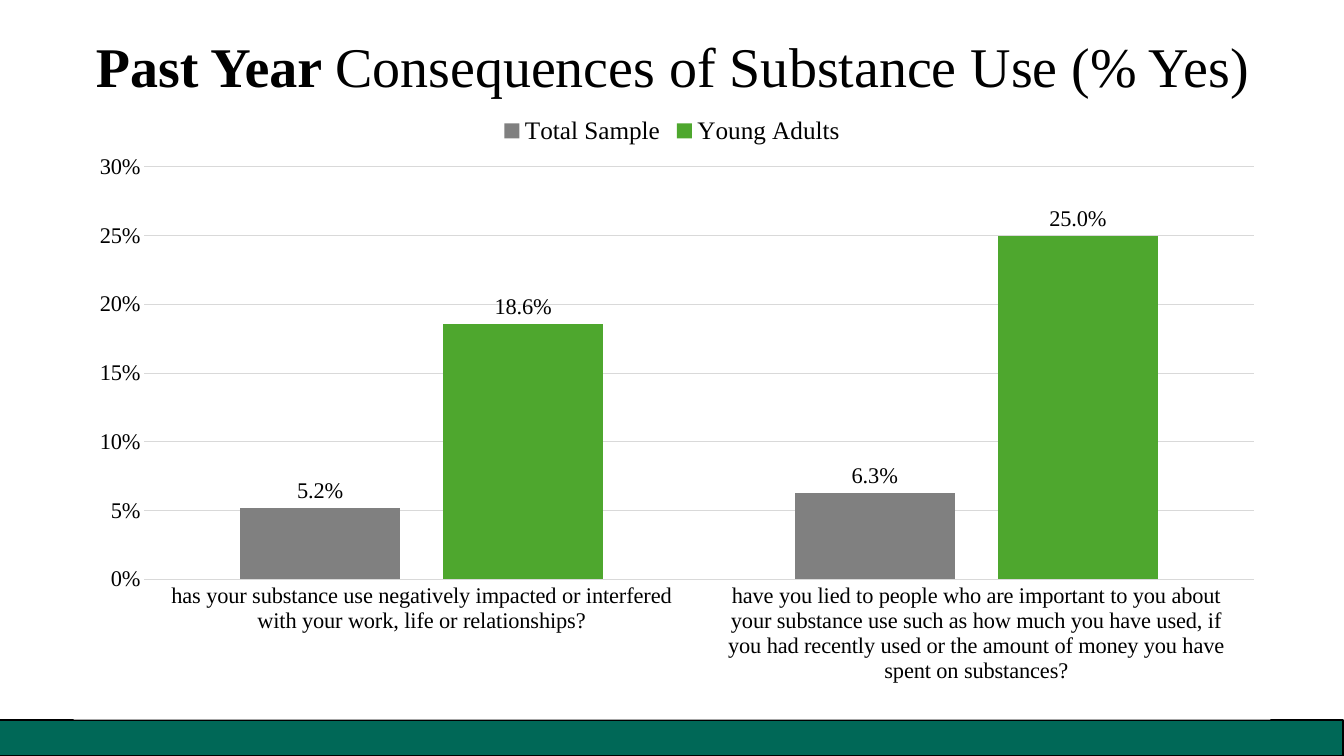
from dataclasses import dataclass

from lxml import etree
from pptx import Presentation
from pptx import util as u
from pptx.chart.data import CategoryChartData
from pptx.dml.color import RGBColor
from pptx.enum import chart as ch, shapes, text
from pptx.oxml import parse_xml
from pptx.oxml.ns import nsdecls, qn

PX = 9144  # 100 px to the inch


@dataclass(frozen=True)
class Theme:
    font: str = "Times New Roman"
    ink: str = "000000"
    paper: str = "FFFFFF"
    grid: str = "D9D9D9"
    footer: str = "006857"
    total: str = "808080"
    young: str = "4EA72E"
    title_size: int = 40
    legend_size: int = 18
    label_size: int = 16


THEME = Theme()
QUESTIONS = [
    "has your substance use negatively impacted or interfered with your work, "
    "life or relationships?",
    "have you lied to people who are important to you about your substance use "
    "such as how much you have used, if you had recently used or the amount of "
    "money you have spent on substances?",
]
# name, values, label format, colour
SERIES = [
    ("Total Sample", (0.052, 0.063), "###0.0%", THEME.total),
    ("Young Adults", (0.186, 0.25), "0.0%", THEME.young),
]
PLOT_AREA = {"x": 0.059, "y": 0.101, "w": 0.927, "h": 0.671}


def px(*lengths):
    return [u.Emu(length * PX) for length in lengths]


def rgb(colour):
    return RGBColor.from_string(colour)


def style_font(font, size):
    font.name = THEME.font
    font.size = u.Pt(size)
    font.color.rgb = rgb(THEME.ink)


def style_line(line, colour, width):
    line.color.rgb = rgb(colour)
    line.width = u.Pt(width)


def add_footer_band(page):
    band = page.shapes.add_shape(shapes.MSO_SHAPE.RECTANGLE, *px(-1, 714, 1333, 36))
    band.shadow.inherit = False
    band.fill.solid()
    band.fill.fore_color.rgb = rgb(THEME.footer)
    style_line(band.line, THEME.ink, 1.5)


def fill_title(page):
    title = page.shapes.title
    title.left, title.top, title.width, title.height = px(37, 26, 1260, 77)
    frame = title.text_frame
    frame.word_wrap = True
    frame.auto_size = text.MSO_AUTO_SIZE.NONE
    frame.vertical_anchor = text.MSO_ANCHOR.MIDDLE
    para = frame.paragraphs[0]
    para.alignment = text.PP_ALIGN.CENTER
    style_font(para.font, THEME.title_size)
    for words, bold in (("Past Year ", True),
                        ("Consequences of Substance Use (% Yes)", False)):
        span = para.add_run()
        span.text = words
        span.font.bold = bold


def place_plot_area(chart):
    """Fix the inner plot area as fractions of the chart."""
    area = chart._chartSpace.chart.plotArea
    for old in area.findall(qn("c:layout")):
        area.remove(old)
    layout = parse_xml(f"<c:layout {nsdecls('c')}/>")
    manual = etree.SubElement(layout, qn("c:manualLayout"))
    settings = {"layoutTarget": "inner", "xMode": "edge", "yMode": "edge", **PLOT_AREA}
    for name, value in settings.items():
        etree.SubElement(manual, qn(f"c:{name}")).set("val", str(value))
    area.insert(0, layout)


def fill_chart_background(chart):
    background = parse_xml(
        f"<c:spPr {nsdecls('c', 'a')}><a:solidFill>"
        f'<a:srgbClr val="{THEME.paper}"/></a:solidFill>'
        "<a:ln><a:noFill/></a:ln></c:spPr>")
    chart._chartSpace.chart.addnext(background)


def style_axes(chart):
    questions, percent = chart.category_axis, chart.value_axis
    for axis in (questions, percent):
        axis.major_tick_mark = axis.minor_tick_mark = ch.XL_TICK_MARK.NONE
        style_font(axis.tick_labels.font, THEME.label_size)
    style_line(questions.format.line, THEME.grid, 0.75)
    percent.minimum_scale, percent.maximum_scale, percent.major_unit = 0, 0.3, 0.05
    percent.tick_labels.number_format = "0%"
    percent.tick_labels.number_format_is_linked = False
    percent.format.line.fill.background()
    style_line(percent.major_gridlines.format.line, THEME.grid, 0.75)


def style_series(series, label_format, colour):
    series.format.fill.solid()
    series.format.fill.fore_color.rgb = rgb(colour)
    labels = series.data_labels
    labels.show_value = True
    labels.number_format = label_format
    labels.number_format_is_linked = False
    labels.position = ch.XL_LABEL_POSITION.OUTSIDE_END
    style_font(labels.font, THEME.label_size)


def add_consequences_chart(page):
    data = CategoryChartData(number_format="0.0%")
    data.categories = QUESTIONS
    for name, values, _, _ in SERIES:
        data.add_series(name, values)
    chart = page.shapes.add_chart(
        ch.XL_CHART_TYPE.COLUMN_CLUSTERED, *px(73, 104, 1187, 610), data).chart
    style_font(chart.font, THEME.label_size)
    chart.has_title = False
    chart.has_legend = True
    chart.legend.position = ch.XL_LEGEND_POSITION.TOP
    chart.legend.include_in_layout = False
    style_font(chart.legend.font, THEME.legend_size)
    plot = chart.plots[0]
    plot.gap_width, plot.overlap = 120, -27
    plot.vary_by_categories = False
    for series, (_, _, label_format, colour) in zip(plot.series, SERIES):
        style_series(series, label_format, colour)
    style_axes(chart)
    place_plot_area(chart)
    fill_chart_background(chart)


def main():
    deck = Presentation()
    deck.slide_width, deck.slide_height = px(1333, 750)
    page = deck.slides.add_slide(deck.slide_layouts.get_by_name("Title Only"))
    add_footer_band(page)
    add_consequences_chart(page)
    fill_title(page)
    deck.save("out.pptx")


if __name__ == "__main__":
    main()
